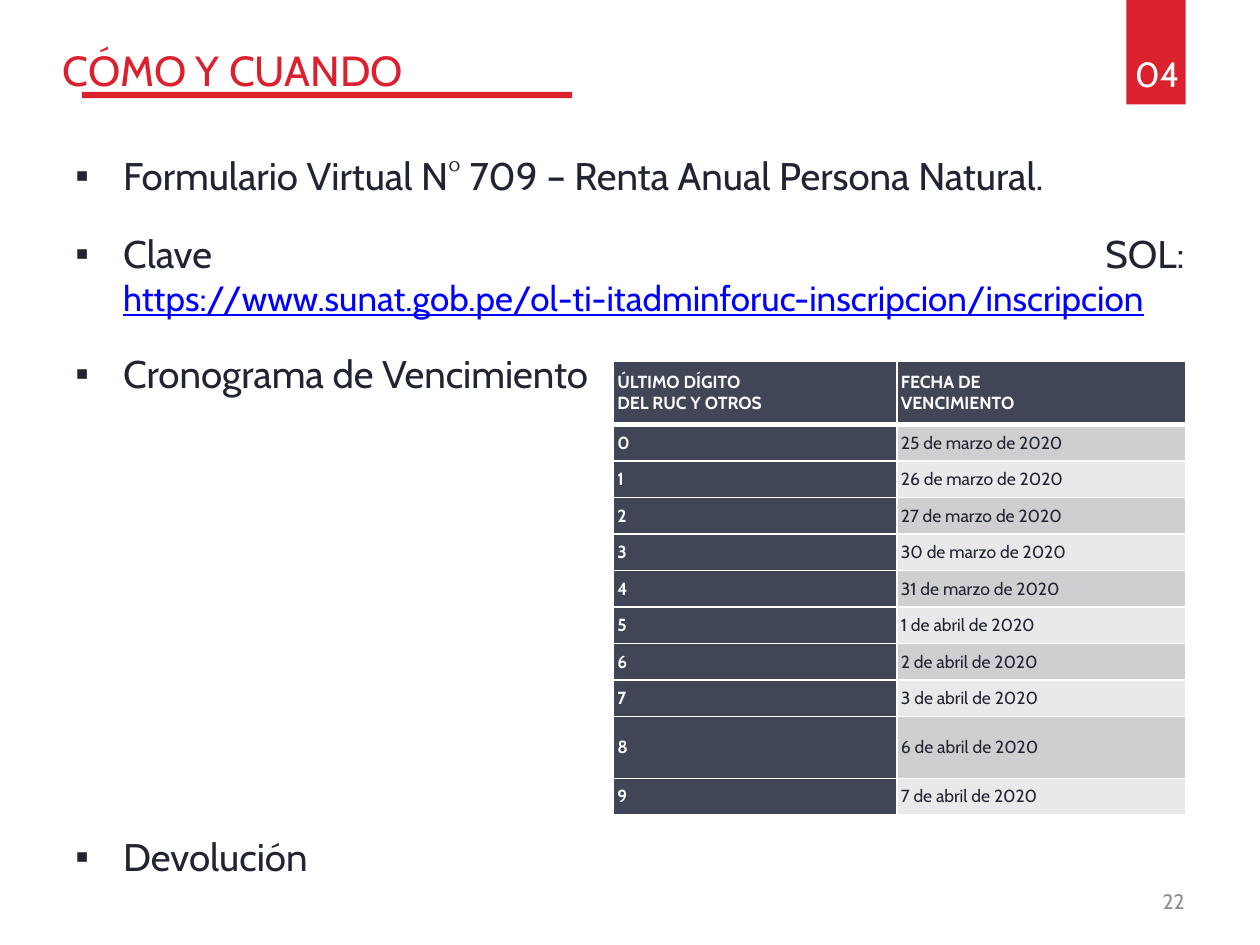
import copy

import lxml.etree
import pptx
import pptx.dml.color
import pptx.enum.shapes
import pptx.enum.text
import pptx.oxml.ns
import pptx.util

COLS, ROWS = 100, 75
UNIT = pptx.util.Inches(10) // COLS
RED, INK, NAVY, WHITE = "DB202E", "202433", "414657", "FFFFFF"
BANDS = ["CFCFD1", "E9E9EA"]
ALIGN = pptx.enum.text.PP_ALIGN
MIDDLE = pptx.enum.text.MSO_ANCHOR.MIDDLE
LINK = "https://www.sunat.gob.pe/ol-ti-itadminforuc-inscripcion/inscripcion"
HEADS = ["ÚLTIMO DÍGITO\vDEL RUC Y OTROS", "FECHA DE\vVENCIMIENTO"]
DAYS = ["25 de marzo", "26 de marzo", "27 de marzo", "30 de marzo", "31 de marzo",
        "1 de abril", "2 de abril", "3 de abril", "6 de abril", "7 de abril"]


def grid(*cells):
    """Turn counts of grid units into lengths."""
    return [pptx.util.Emu(round(n * UNIT)) for n in cells]


def color(code):
    """Turn a hex string into a colour."""
    return pptx.dml.color.RGBColor.from_string(code)


def node(parent, tag, place=None, **attrs):
    """Add a drawing element to a parent, at a place if given."""
    item = lxml.etree.Element(pptx.oxml.ns.qn(tag), attrs)
    parent.insert(len(parent) if place is None else place, item)
    return item


def style(para, size, code, **rest):
    """Format all runs and line breaks of a paragraph."""
    values = {"name": "Cabin", "size": pptx.util.Pt(size), **rest}
    for run in para.runs:
        for key, value in values.items():
            setattr(run.font, key, value)
        run.font.color.rgb = color(code)
    for gap in para._p.findall(pptx.oxml.ns.qn("a:br")):
        gap.insert(0, copy.deepcopy(para.runs[0]._r.rPr))


def label(slide, box, text, size, code, align=ALIGN.LEFT, **frame):
    """Add a text box and return its first paragraph."""
    body = slide.shapes.add_textbox(*grid(*box)).text_frame
    for key, value in {"word_wrap": True, **frame}.items():
        setattr(body, key, value)
    para = body.paragraphs[0]
    para.text, para.alignment = text, align
    style(para, size, code)
    return para


def block(slide, box):
    """Add a plain red rectangle."""
    shape = slide.shapes.add_shape(pptx.enum.shapes.MSO_SHAPE.RECTANGLE, *grid(*box))
    shape.shadow.inherit = False
    shape.fill.solid()
    shape.fill.fore_color.rgb = color(RED)
    shape.line.fill.background()


def bullets(slide, box, items):
    """Add a justified list from pairs of text and space before."""
    body = slide.shapes.add_textbox(*grid(*box)).text_frame
    body.word_wrap = True
    for i, (text, gap) in enumerate(items):
        para = body.add_paragraph() if i else body.paragraphs[0]
        para.text, para.alignment = text, ALIGN.JUSTIFY
        para.space_before = pptx.util.Pt(gap)
        style(para, 22, INK)
        for run in para.runs:
            if run.text == LINK:
                run.font.size, run.font.underline = pptx.util.Pt(20), True
                run.font.color.rgb = color("0000FF")
        props = para._p.get_or_add_pPr()
        inset = grid(3.8)[0]
        props.set("marL", str(inset))
        props.set("indent", str(-inset))
        node(props, "a:buFont", typeface="Arial")
        node(props, "a:buChar", char="▪")


def edges(cell, widths):
    """Draw white cell borders, in the order left, right, top, bottom."""
    props = cell._tc.get_or_add_tcPr()
    for i, (side, width) in enumerate(zip("LRTB", widths)):
        line = node(props, f"a:ln{side}", i, w=str(pptx.util.Pt(width)))
        node(node(line, "a:solidFill"), "a:srgbClr", val=WHITE)


def fill(cell, text, back, code, bold, widths):
    """Write and format one table cell."""
    cell.text = text
    inset = grid(0.3)[0]
    sides = {f"margin_{side}": inset for side in ("left", "right", "top", "bottom")}
    for key, value in {"vertical_anchor": MIDDLE, **sides}.items():
        setattr(cell, key, value)
    cell.fill.solid()
    cell.fill.fore_color.rgb = color(back)
    style(cell.text_frame.paragraphs[0], 10, code, bold=bold)
    edges(cell, widths)


def dates(slide, box):
    """Add the table of due dates."""
    rows = [HEADS] + [[str(i), f"{day} de 2020"] for i, day in enumerate(DAYS)]
    table = slide.shapes.add_table(len(rows), 2, *grid(*box)).table
    for col, width in zip(table.columns, grid(22.5, 22.9)):
        col.width = width
    tall = {0: 5, 9: 4.9}
    for r, texts in enumerate(rows):
        table.rows[r].height = grid(tall.get(r, 2.9))[0]
        widths = [1, 1, 3 if r == 1 else 1, 3 if r == 0 else 1]
        for c, text in enumerate(texts):
            dark = r == 0 or c == 0
            back, code = (NAVY, WHITE) if dark else (BANDS[(r - 1) % 2], INK)
            fill(table.cell(r, c), text, back, code, dark, widths)


def main():
    """Build and save the slide."""
    deck = pptx.Presentation()
    deck.slide_width, deck.slide_height = grid(COLS, ROWS)
    slide = deck.slides.add_slide(deck.slide_layouts[6])
    flush = {"margin_left": 0, "margin_right": 0}
    label(slide, (5, 3, 90, 12.5), "CÓMO Y CUANDO", 24, RED, **flush)
    bullets(slide, (5, 11.6, 90, 60.3), [
        ("Formulario Virtual N° 709 – Renta Anual Persona Natural.", 0),
        (f"Clave SOL:\v{LINK}", 18),
        ("Cronograma de Vencimiento", 18),
        ("Devolución", 250),
    ])
    label(slide, (71.7, 69.5, 23.3, 4), "22", 12, "8D8E90", ALIGN.RIGHT,
          vertical_anchor=MIDDLE)
    block(slide, (6.5, 7.3, 38.9, 0.5))
    block(slide, (89.4, 0, 4.7, 8.3))
    label(slide, (89.5, 3.7, 4.7, 4.6), "04", 20, WHITE, ALIGN.CENTER, **flush)
    dates(slide, (48.7, 28.7, 45.4, 36.1))
    deck.save("out.pptx")


if __name__ == "__main__":
    main()
